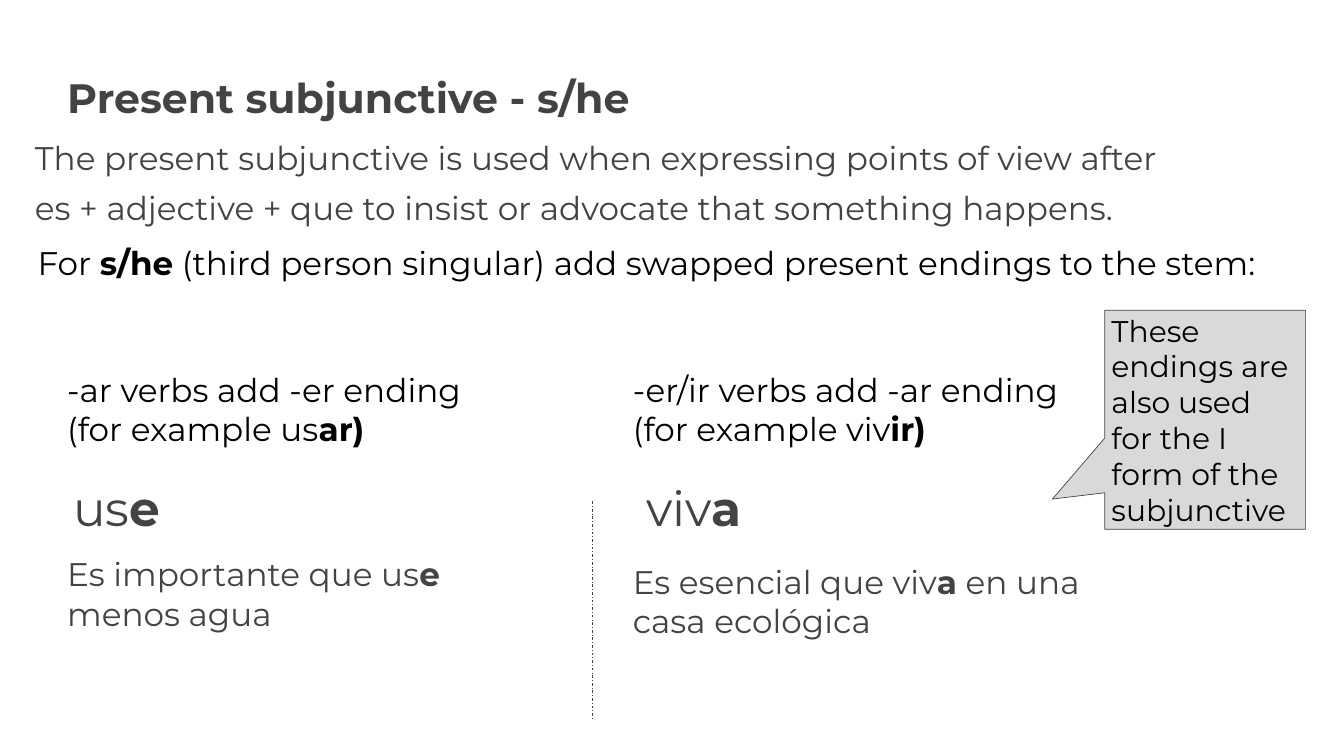
from lxml.etree import SubElement
from pptx import Presentation
from pptx.dml.color import RGBColor
from pptx.enum.dml import MSO_LINE
from pptx.enum.shapes import MSO_CONNECTOR, MSO_SHAPE
from pptx.enum.text import MSO_ANCHOR, MSO_AUTO_SIZE, PP_ALIGN
from pptx.oxml.ns import qn
from pptx.util import Cm, Pt

FONT = "Montserrat"
GREY = RGBColor(0x43, 0x43, 0x43)
BLACK = RGBColor(0x00, 0x00, 0x00)
CALLOUT_GREY = RGBColor(0xD9, 0xD9, 0xD9)
BODY_SIZE = 35
INSET = 0.25


def write(shape, paragraphs, size, color, inset=0, spacing=None, anchor=MSO_ANCHOR.TOP):
    """Fill a shape with paragraphs, each a list of (text, bold) runs."""
    frame = shape.text_frame
    frame.word_wrap = True
    frame.auto_size = MSO_AUTO_SIZE.NONE
    frame.vertical_anchor = anchor
    frame.margin_left = frame.margin_right = Cm(inset)
    frame.margin_top = frame.margin_bottom = Cm(inset)
    for index, runs in enumerate(paragraphs):
        paragraph = frame.add_paragraph() if index else frame.paragraphs[0]
        paragraph.alignment = PP_ALIGN.LEFT
        if spacing:
            paragraph.line_spacing = spacing
        for text, bold in runs:
            run = paragraph.add_run()
            run.text = text
            run.font.name = FONT
            run.font.size = Pt(size)
            run.font.bold = bold
            run.font.color.rgb = color


def add_title(slide, text):
    """Place and format the slide title."""
    title = slide.shapes.title
    title.left, title.top, title.width, title.height = Cm(2.54), Cm(2.46), Cm(40.84), Cm(4.52)
    write(title, [[(text, True)]], 44, GREY, spacing=1.15)


def add_text(slide, left, top, width, height, paragraphs, size=BODY_SIZE, color=BLACK, **layout):
    """Add a text box."""
    box = slide.shapes.add_textbox(Cm(left), Cm(top), Cm(width), Cm(height))
    write(box, paragraphs, size, color, **layout)


def add_divider(slide, x, top, bottom):
    """Add the dash-dot line between the verb groups."""
    divider = slide.shapes.add_connector(MSO_CONNECTOR.STRAIGHT, Cm(x), Cm(top), Cm(x), Cm(bottom))
    divider.line.color.rgb = GREY
    divider.line.width = Pt(0.75)
    divider.line.dash_style = MSO_LINE.DASH_DOT
    SubElement(divider._element.spPr, qn("a:effectLst"))


def add_callout(slide, text):
    """Add the grey speech callout that points at the endings."""
    callout = slide.shapes.add_shape(
        MSO_SHAPE.RECTANGULAR_CALLOUT, Cm(41.76), Cm(11.73), Cm(7.59), Cm(8.28))
    callout.adjustments[0] = -0.761
    callout.adjustments[1] = 0.362
    callout.shadow.inherit = False
    callout.fill.solid()
    callout.fill.fore_color.rgb = CALLOUT_GREY
    callout.line.color.rgb = GREY
    callout.line.width = Pt(0.75)
    write(callout, [[(text, False)]], 32, BLACK, inset=INSET, anchor=MSO_ANCHOR.MIDDLE)


def add_verb_group(slide, left, form_left, example_top, rule, form, example):
    """Add a verb group: its rule, the resulting form and an example."""
    add_text(slide, left, 13.72, 18.5, 3.6, rule, inset=INSET)
    add_text(slide, form_left, 17.42, 12.04, 2.03, [form], size=52, color=GREY, spacing=1.3)
    add_text(slide, left, example_top, 17.88, 3.48, [example], color=GREY, inset=INSET)


def main():
    """Build the slide and save it."""
    presentation = Presentation()
    presentation.slide_width, presentation.slide_height = Cm(50.8), Cm(28.58)
    slide = presentation.slides.add_slide(presentation.slide_layouts[5])

    add_title(slide, "Present subjunctive - s/he")
    usage = ("The present subjunctive is used when expressing points of view after "
             "es + adjective + que to insist or advocate that something happens.")
    add_text(slide, 1.32, 4.75, 42.49, 3.73, [[(usage, False)]], color=GREY, spacing=1.3)
    add_text(slide, 1.17, 8.94, 46.63, 2.03, [[
        ("For ", False), ("s/he", True),
        (" (third person singular) add swapped present endings to the stem:", False)]],
        inset=INSET)

    add_verb_group(
        slide, 2.29, 2.77, 20.7,
        [[("-ar verbs add -er ending", False)], [("(for example us", False), ("ar)", True)]],
        [("us", False), ("e", True)],
        [("Es importante que us", False), ("e", True), (" menos agua", False)])
    add_verb_group(
        slide, 23.67, 24.43, 20.98,
        [[("-er/ir verbs add -ar ending", False)], [("(for example viv", False), ("ir)", True)]],
        [("viv", False), ("a", True)],
        [("Es esencial que viv", False), ("a", True), (" en una casa ecológica", False)])

    add_divider(slide, 22.4, 18.95, 27.23)
    add_callout(slide, "These endings are also used for the I form of the subjunctive")
    presentation.save("out.pptx")


if __name__ == "__main__":
    main()
